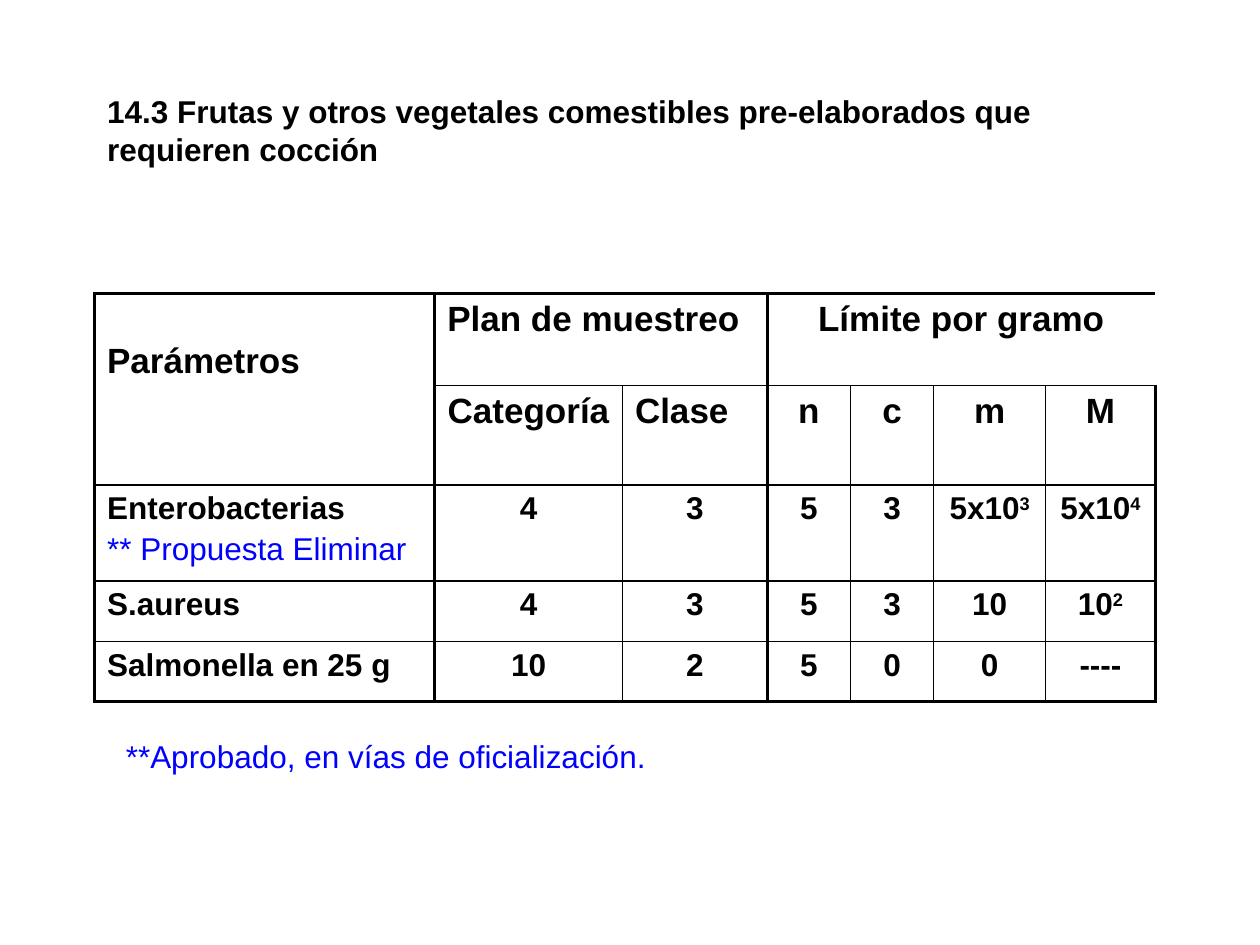
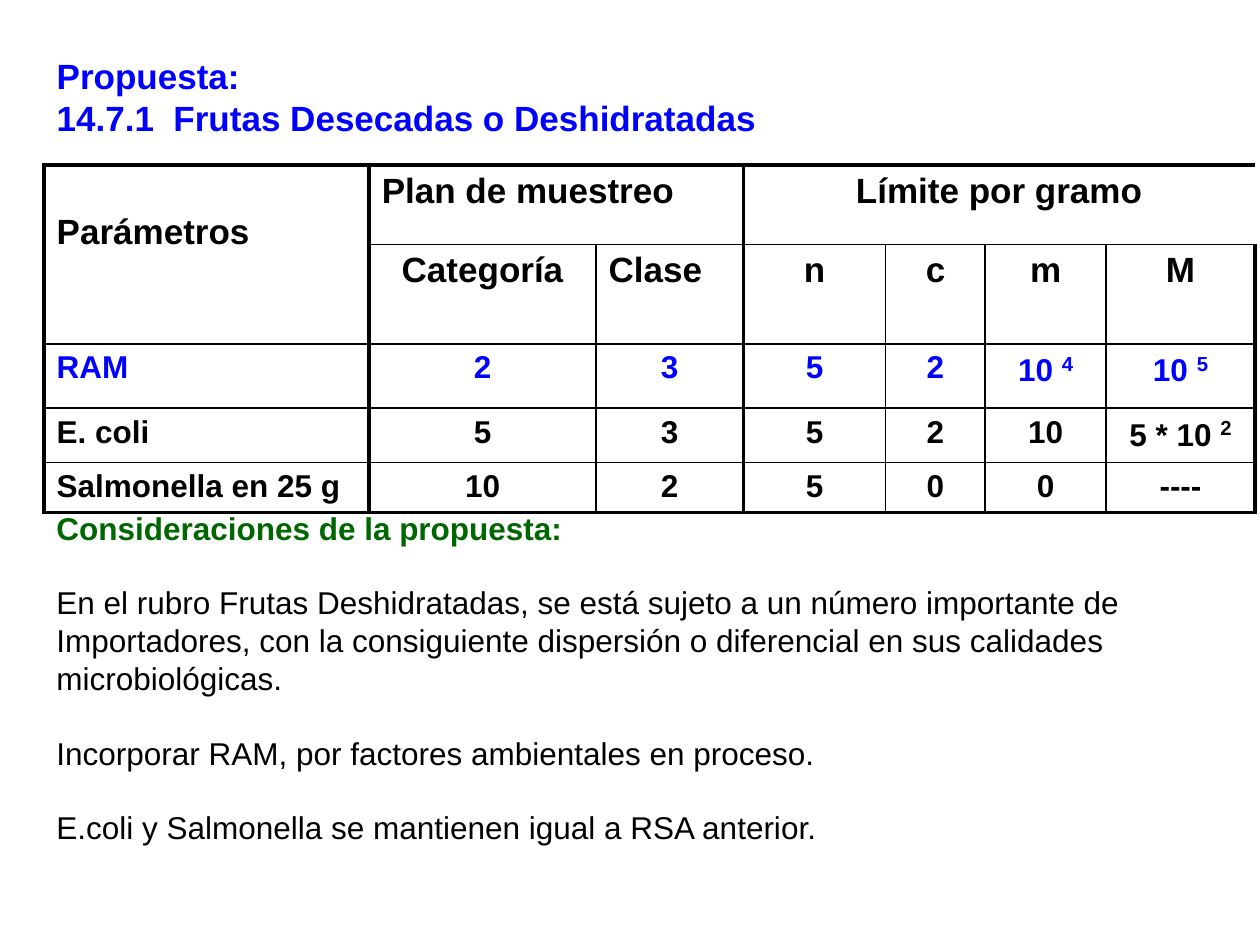
from lxml import etree
from pptx import Presentation
from pptx.dml.color import RGBColor
from pptx.enum.text import MSO_ANCHOR, PP_ALIGN
from pptx.oxml.ns import qn
from pptx.util import Inches, Pt

LEFT, CENTER = PP_ALIGN.LEFT, PP_ALIGN.CENTER
TOP = MSO_ANCHOR.TOP
FONT = "Arial"
BLACK, BLUE, GREEN = "000000", "0000FF", "006600"
NO_STYLE = "{2D5ABB26-0587-4C30-8999-92F81FD0307C}"
THIN, HEAVY = Pt(1), Pt(2.25)
HEAVY_COLUMN_EDGES = (0, 1, 3, 7)
HEAVY_ROW_EDGES = (0, 5)

HEADER_ROWS = [
    ["Parámetros", "Plan de muestreo", "", "Límite por gramo", "", "", ""],
    ["", "Categoría", "Clase", "n", "c", "m", "M"],
]
LEFT_HEADERS = ("Plan de muestreo", "Clase")

SLIDES = [
    {
        "title": ["14.3 Frutas y otros vegetales comestibles pre-elaborados que requieren cocción"],
        "title_box": (0.75, 0.68, 8.66, 0.7),
        "title_format": {"size": 18, "color": BLACK},
        "title_margin": 0.05,
        "table_at": (0.75, 2.33),
        "columns": [2.7, 1.49, 1.15, 0.66, 0.66, 0.89, 0.87],
        "rows": [0.73, 0.79, 0.76, 0.48, 0.48],
        "superscript_size": 18,
        "blue_row": None,
        "data": [
            ["Enterobacterias\n** Propuesta Eliminar", "4", "3", "5", "3", "5x10^3", "5x10^4"],
            ["S.aureus", "4", "3", "5", "3", "10", "10^2"],
            ["Salmonella en 25 g", "10", "2", "5", "0", "0", "----"],
        ],
        "note_box": (0.9, 5.8, 7.17, 0.4),
        "notes": [("**Aprobado, en vías de oficialización.", BLUE, False)],
    },
    {
        "title": ["Propuesta:", "14.7.1  Frutas Desecadas o Deshidratadas"],
        "title_box": (0.35, 0.36, 8.27, 0.9),
        "title_format": {"size": 20, "color": BLUE},
        "title_margin": 0.07,
        "table_at": (0.35, 1.31),
        "columns": [2.58, 1.8, 1.17, 1.13, 0.79, 0.96, 1.18],
        "rows": [0.63, 0.79, 0.51, 0.43, 0.4],
        "superscript_size": 20,
        "blue_row": 2,
        "data": [
            ["RAM", "2", "3", "5", "2", "10 ^4", "10 ^5"],
            ["E. coli", "5", "3", "5", "2", "10", "5 * 10 ^2"],
            ["Salmonella en 25 g", "10", "2", "5", "0", "0", "----"],
        ],
        "note_box": (0.35, 3.99, 9.06, 2.83),
        "notes": [
            ("Consideraciones de la propuesta:", GREEN, True),
            ("En el rubro Frutas Deshidratadas, se está sujeto a un número importante de "
             "Importadores, con la consiguiente dispersión o diferencial en sus calidades "
             "microbiológicas.", BLACK, False),
            ("Incorporar RAM, por factores ambientales en proceso.", BLACK, False),
            ("E.coli y Salmonella se mantienen igual a RSA anterior.", BLACK, False),
        ],
    },
]


def write(frame, index, text, size, color, bold=True, align=LEFT, space=0, superscript_size=18):
    """Write paragraph number index; the text after ^ is raised."""
    paragraph = frame.paragraphs[0] if index == 0 else frame.add_paragraph()
    paragraph.alignment = align
    paragraph.space_before = Pt(space if index else 0)
    for part, piece in enumerate(text.split("^")):
        run = paragraph.add_run()
        run.text = piece
        values = {"name": FONT, "size": Pt(superscript_size if part else size), "bold": bold}
        for name, value in values.items():
            setattr(run.font, name, value)
        run.font.color.rgb = RGBColor.from_string(color)
        if part:
            run._r.get_or_add_rPr().set("baseline", "30000")


def add_border(cell, side, width):
    line = etree.SubElement(cell._tc.get_or_add_tcPr(), qn("a:ln" + side), w=str(width))
    fill = etree.SubElement(line, qn("a:solidFill"))
    etree.SubElement(fill, qn("a:srgbClr"), val=BLACK)


presentation = Presentation()
presentation.slide_width, presentation.slide_height = Inches(10), Inches(7.5)

for content in SLIDES:
    slide = presentation.slides.add_slide(presentation.slide_layouts[5])

    title = slide.shapes.title
    title.left, title.top, title.width, title.height = map(Inches, content["title_box"])
    title.text_frame.vertical_anchor = TOP
    title.text_frame.margin_top = Inches(content["title_margin"])
    for index, text in enumerate(content["title"]):
        write(title.text_frame, index, text, **content["title_format"])

    cell_texts = HEADER_ROWS + content["data"]
    columns, rows = content["columns"], content["rows"]
    left, top = content["table_at"]
    frame = slide.shapes.add_table(len(rows), len(columns), Inches(left), Inches(top),
                                   Inches(sum(columns)), Inches(sum(rows)))
    table = frame.table
    table.first_row = table.horz_banding = False
    table._tbl.tblPr.find(qn("a:tableStyleId")).text = NO_STYLE
    for column, width in zip(table.columns, columns):
        column.width = Inches(width)
    for row, height in zip(table.rows, rows):
        row.height = Inches(height)
    for first, last in (((0, 0), (1, 0)), ((0, 1), (0, 2)), ((0, 3), (0, 6))):
        table.cell(*first).merge(table.cell(*last))

    for r, texts in enumerate(cell_texts):
        for c, text in enumerate(texts):
            cell = table.cell(r, c)
            for side, edge in (("L", c), ("R", c + 1)):
                heavy = edge in HEAVY_COLUMN_EDGES
                if heavy or r > 0:
                    add_border(cell, side, HEAVY if heavy else THIN)
            for side, edge in (("T", r), ("B", r + 1)):
                if c > 0 or edge != 1:
                    add_border(cell, side, HEAVY if edge in HEAVY_ROW_EDGES else THIN)
            cell.fill.background()
            if not text:
                continue
            cell.margin_top = Inches(0.38 if r == c == 0 else 0.05)
            align = LEFT if c == 0 or text in LEFT_HEADERS else CENTER
            for index, line in enumerate(text.split("\n")):
                color = BLUE if r == content["blue_row"] or index else BLACK
                write(cell.text_frame, index, line, 20 if r < 2 else 18, color, index == 0,
                      align, 3, content["superscript_size"])

    note = slide.shapes.add_textbox(*map(Inches, content["note_box"]))
    note.text_frame.word_wrap = True
    for index, (text, color, bold) in enumerate(content["notes"]):
        write(note.text_frame, index, text, 18, color, bold, space=21)

presentation.save("out.pptx")
